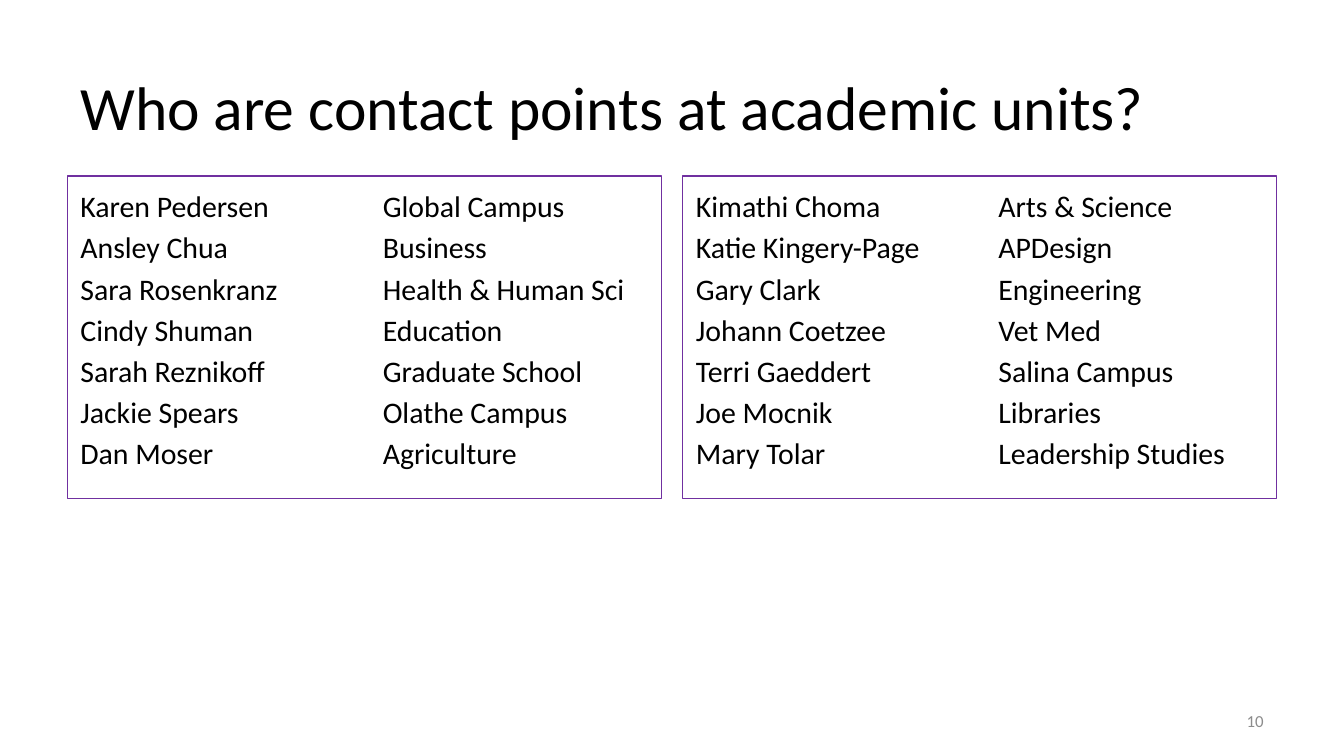
from pptx import Presentation
from pptx.dml.color import RGBColor
from pptx.enum.shapes import MSO_SHAPE as SHAPE
from pptx.enum.text import MSO_ANCHOR as ANCHOR, PP_ALIGN as ALIGN
from pptx.oxml.ns import qn
from pptx.util import Inches, Pt
from lxml.etree import SubElement

# Content
TITLE = "Who are contact points at academic units?"
PAGE = "10"
CONTACTS = [
    [("Karen Pedersen", "Global Campus"),
     ("Ansley Chua", "Business"),
     ("Sara Rosenkranz", "Health & Human Sci"),
     ("Cindy Shuman", "Education"),
     ("Sarah Reznikoff", "Graduate School"),
     ("Jackie Spears", "Olathe Campus"),
     ("Dan Moser", "Agriculture")],
    [("Kimathi Choma", "Arts & Science"),
     ("Katie Kingery-Page", "APDesign"),
     ("Gary Clark", "Engineering"),
     ("Johann Coetzee", "Vet Med"),
     ("Terri Gaeddert", "Salina Campus"),
     ("Joe Mocnik", "Libraries"),
     ("Mary Tolar", "Leadership Studies")],
]

# Layout and formats
SLIDE_WIDTH = 10
SLIDE_HEIGHT = SLIDE_WIDTH * 9 / 16
LEFT, TOP, WIDTH, HEIGHT, GAP = 0.5, 1.31, 4.42, 2.4, 0.16
UNIT_TAB = 2.25
TITLE_FONT = {"name": "Calibri", "size": Pt(33)}
LIST_FONT = {"name": "Calibri", "size": Pt(16)}
PAGE_FONT = {"name": "Calibri", "size": Pt(9)}


def rgb(value):
    return RGBColor.from_string(value)


def write(p, text, font, color="000000"):
    r = p.add_run()
    r.text = text
    for name, value in font.items():
        setattr(r.font, name, value)
    r.font.color.rgb = rgb(color)


def add_label(slide, box, text, font, color="000000", align=ALIGN.LEFT):
    tf = slide.shapes.add_textbox(*map(Inches, box)).text_frame
    tf.word_wrap = True
    tf.vertical_anchor = ANCHOR.MIDDLE
    p = tf.paragraphs[0]
    p.alignment = align
    write(p, text, font, color)


def add_contacts(slide, left, contacts):
    sp = slide.shapes.add_shape(
        SHAPE.RECTANGLE, *map(Inches, (left, TOP, WIDTH, HEIGHT)))
    sp.shadow.inherit = False
    sp.fill.background()
    sp.line.color.rgb = rgb("7030A0")
    sp.line.width = Pt(0.75)
    tf = sp.text_frame
    tf.word_wrap = True
    tf.vertical_anchor = ANCHOR.TOP
    for i, (person, unit) in enumerate(contacts):
        p = tf.add_paragraph() if i else tf.paragraphs[0]
        # One tab stop lines up the units
        tabs = SubElement(p._p.get_or_add_pPr(), qn("a:tabLst"))
        SubElement(tabs, qn("a:tab"), pos=str(Inches(UNIT_TAB)), algn="l")
        p.alignment = ALIGN.LEFT
        p.line_spacing = 1.15
        write(p, f"{person}\t{unit}", LIST_FONT)


prs = Presentation()
prs.slide_width, prs.slide_height = Inches(SLIDE_WIDTH), Inches(SLIDE_HEIGHT)
slide = prs.slides.add_slide(prs.slide_layouts[6])

# Title, contact boxes, page number
add_label(slide, (LEFT, 0.32, 9, 0.94), TITLE, TITLE_FONT)
for i, contacts in enumerate(CONTACTS):
    add_contacts(slide, LEFT + i * (WIDTH + GAP), contacts)
add_label(slide, (7.17, 5.21, 2.33, 0.3), PAGE, PAGE_FONT, "8C8C8C", ALIGN.RIGHT)

prs.save("out.pptx")
